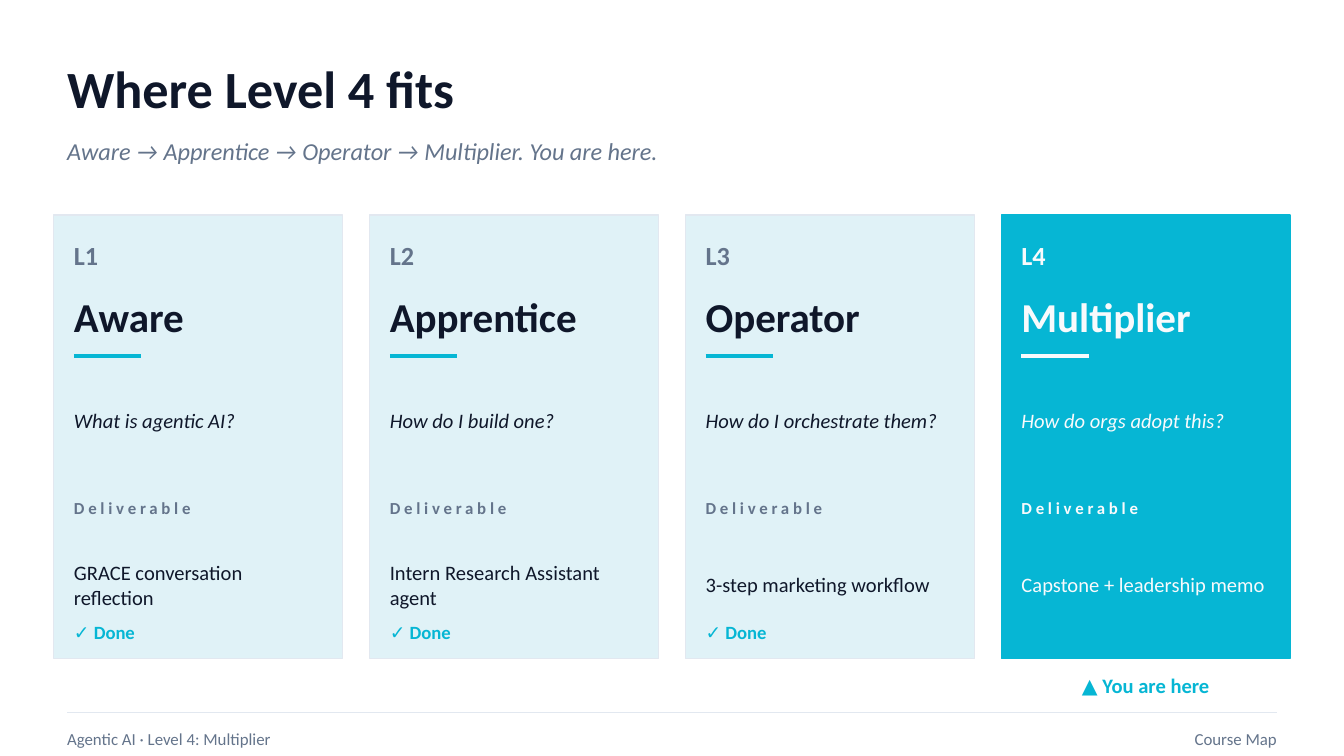
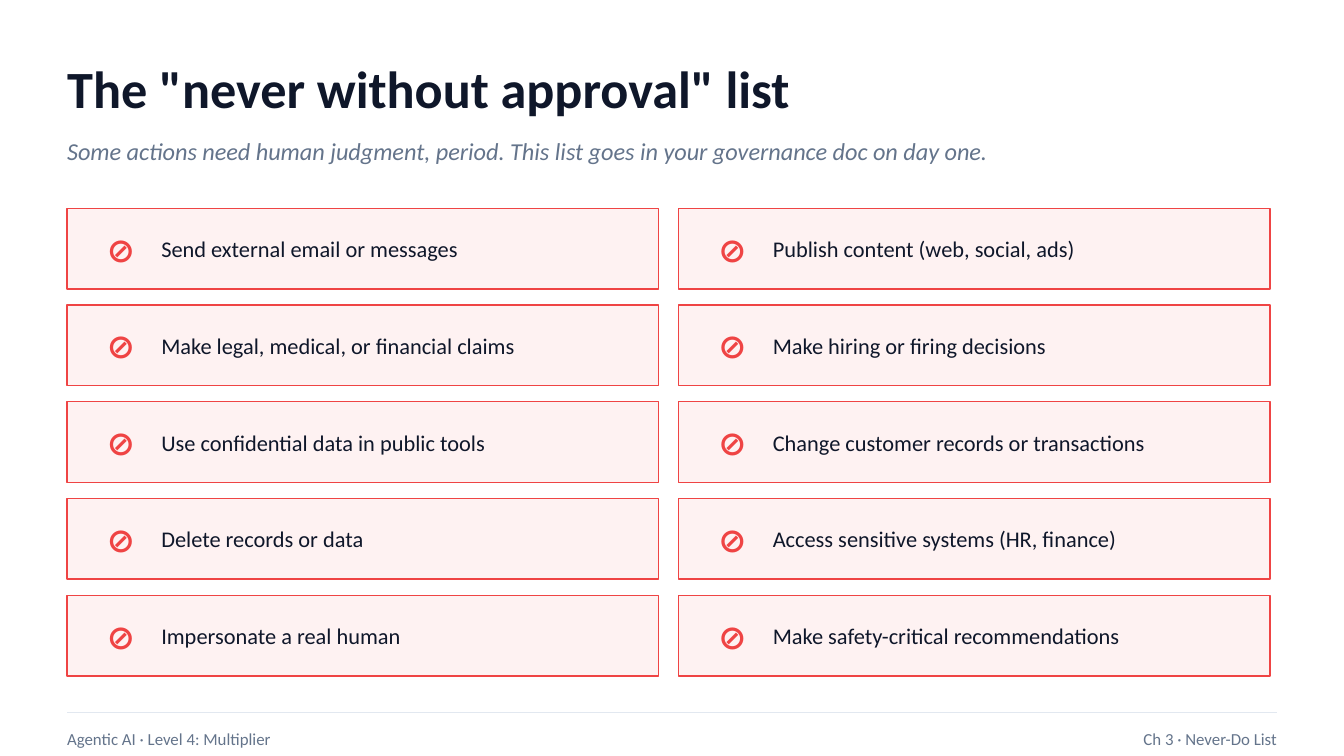
from dataclasses import dataclass
from typing import NamedTuple

from lxml.etree import SubElement
from pptx import Presentation
from pptx.dml.color import RGBColor
from pptx.enum.shapes import MSO_CONNECTOR, MSO_SHAPE
from pptx.enum.text import MSO_ANCHOR, MSO_AUTO_SIZE, PP_ALIGN
from pptx.oxml.ns import qn
from pptx.util import Pt

FONT = "Calibri"
INK = "0F172A"
SLATE = "64748B"
CYAN = "06B6D4"
PALE = "E0F2F7"
EDGE = "E2E8F0"
SNOW = "F8FAFC"
RED = "EF4444"
ROSE = "FEF2F2"
COURSE = "Agentic AI · Level 4: Multiplier"


class Box(NamedTuple):
    left: float
    top: float
    width: float
    height: float


@dataclass(frozen=True)
class Style:
    size: float
    ink: str
    bold: bool = False
    slant: bool = False
    align: PP_ALIGN = PP_ALIGN.LEFT
    track: float = 0


@dataclass(frozen=True)
class Level:
    code: str
    name: str
    ask: str
    work: str
    done: bool = True


@dataclass(frozen=True)
class Theme:
    fill: str
    edge: str
    head: str
    soft: str
    rule: str


PAST = Theme(PALE, EDGE, INK, SLATE, CYAN)
NOW = Theme(CYAN, CYAN, SNOW, SNOW, SNOW)

LEVELS = [
    Level("L1", "Aware", "What is agentic AI?", "GRACE conversation reflection"),
    Level("L2", "Apprentice", "How do I build one?", "Intern Research Assistant agent"),
    Level("L3", "Operator", "How do I orchestrate them?", "3-step marketing workflow"),
    Level("L4", "Multiplier", "How do orgs adopt this?", "Capstone + leadership memo", False),
]

BANS = [
    "Send external email or messages",
    "Publish content (web, social, ads)",
    "Make legal, medical, or financial claims",
    "Make hiring or firing decisions",
    "Use confidential data in public tools",
    "Change customer records or transactions",
    "Delete records or data",
    "Access sensitive systems (HR, finance)",
    "Impersonate a real human",
    "Make safety-critical recommendations",
]


def tint(code: str) -> RGBColor:
    return RGBColor.from_string(code)


def write(shape, text: str, style: Style) -> None:
    frame = shape.text_frame
    frame.word_wrap = True
    frame.auto_size = MSO_AUTO_SIZE.NONE
    frame.vertical_anchor = MSO_ANCHOR.MIDDLE
    frame.margin_left = frame.margin_right = 0
    frame.margin_top = frame.margin_bottom = 0
    para = frame.paragraphs[0]
    para.alignment = style.align
    run = para.add_run()
    run.text = text
    if style.track:
        run._r.get_or_add_rPr().set("spc", str(int(style.track * 100)))
    font = para.font
    font.name = FONT
    font.size = Pt(style.size)
    font.bold = style.bold
    font.italic = style.slant
    font.color.rgb = tint(style.ink)


def label(slide, box: Box, text: str, style: Style) -> None:
    write(slide.shapes.add_textbox(*map(Pt, box)), text, style)


def panel(slide, box: Box, fill: str, edge: str) -> None:
    shape = slide.shapes.add_shape(MSO_SHAPE.RECTANGLE, *map(Pt, box))
    shape.shadow.inherit = False
    shape.fill.solid()
    shape.fill.fore_color.rgb = tint(fill)
    shape.line.color.rgb = tint(edge)
    shape.line.width = Pt(0.75)


def rule(slide, left: float, top: float, width: float, ink: str, weight: float) -> None:
    line = slide.shapes.add_connector(
        MSO_CONNECTOR.STRAIGHT, Pt(left), Pt(top), Pt(left + width), Pt(top)
    )
    line.line.color.rgb = tint(ink)
    line.line.width = Pt(weight)
    SubElement(line._element.spPr, qn("a:effectLst"))


def start(deck, title: str, lead: str):
    slide = deck.slides.add_slide(deck.slide_layouts.get_by_name("Title Only"))
    head = slide.shapes.title
    head.left, head.top, head.width, head.height = map(Pt, Box(36, 25.2, 648, 43.2))
    write(head, title, Style(28, INK, bold=True))
    label(slide, Box(36, 68.4, 648, 25.2), lead, Style(13, SLATE, slant=True))
    return slide


def footer(slide, topic: str) -> None:
    rule(slide, 36, 381.6, 648, EDGE, 0.75)
    label(slide, Box(36, 385.2, 360, 21.6), COURSE, Style(9, SLATE))
    label(slide, Box(396, 385.2, 288, 21.6), topic, Style(9, SLATE, align=PP_ALIGN.RIGHT))


def card(slide, left: float, level: Level) -> None:
    theme = PAST if level.done else NOW
    panel(slide, Box(left, 115.2, 154.8, 237.6), theme.fill, theme.edge)
    inner = left + 10.8
    rows = [
        (122.4, 28.8, level.code, Style(14, theme.soft, bold=True)),
        (151.2, 36, level.name, Style(22, theme.head, bold=True)),
        (200.16, 50.4, level.ask, Style(11, theme.head, slant=True)),
        (262.8, 18, "Deliverable", Style(9, theme.soft, bold=True, track=2)),
        (280.8, 64.8, level.work, Style(11, theme.head)),
    ]
    if level.done:
        rows.append((327.6, 21.6, "✓ Done", Style(10, CYAN, bold=True)))
    for top, height, text, style in rows:
        label(slide, Box(inner, top, 133.2, height), text, style)
    rule(slide, inner, 190.8, 36, theme.rule, 2)
    if not level.done:
        here = Style(11, CYAN, bold=True, align=PP_ALIGN.CENTER)
        label(slide, Box(left, 356.4, 154.8, 21.6), "▲ You are here", here)


def ban(slide, left: float, top: float, text: str) -> None:
    panel(slide, Box(left, top, 316.8, 43.2), ROSE, RED)
    sign = Style(18, RED, bold=True, align=PP_ALIGN.CENTER)
    label(slide, Box(left + 10.8, top, 36, 43.2), "⊘", sign)
    label(slide, Box(left + 50.4, top, 262.8, 43.2), text, Style(12, INK))


def course_map(deck) -> None:
    slide = start(
        deck,
        "Where Level 4 fits",
        "Aware → Apprentice → Operator → Multiplier. You are here.",
    )
    for index, level in enumerate(LEVELS):
        card(slide, 28.8 + 169.2 * index, level)
    footer(slide, "Course Map")


def never_list(deck) -> None:
    slide = start(
        deck,
        'The "never without approval" list',
        "Some actions need human judgment, period. "
        "This list goes in your governance doc on day one.",
    )
    for index, text in enumerate(BANS):
        row, col = divmod(index, 2)
        ban(slide, 36 + 327.6 * col, 111.6 + 51.84 * row, text)
    footer(slide, "Ch 3 · Never-Do List")


def main() -> None:
    deck = Presentation()
    deck.slide_width = Pt(720)
    deck.slide_height = Pt(405)
    course_map(deck)
    never_list(deck)
    deck.save("out.pptx")


if __name__ == "__main__":
    main()
